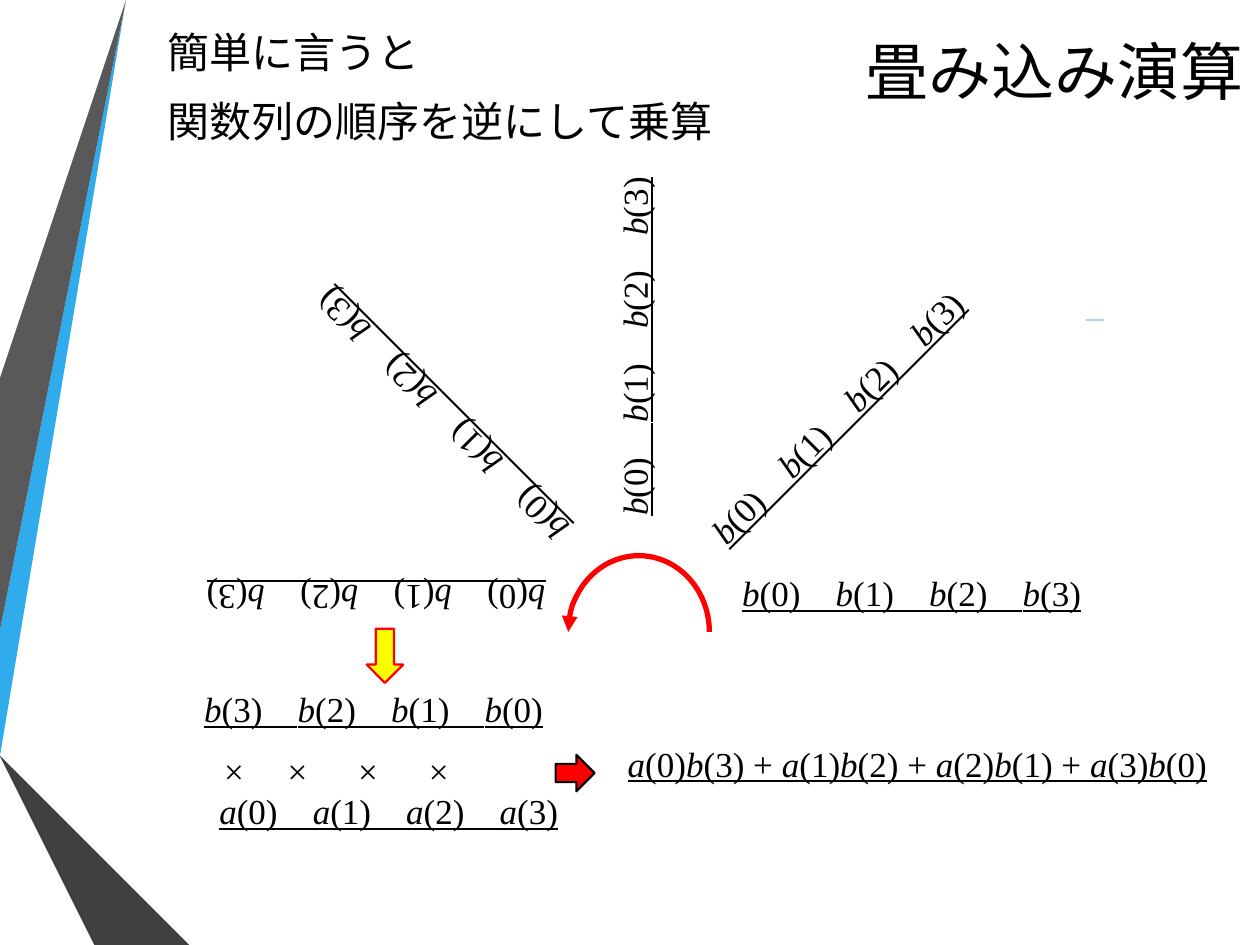
from itertools import groupby

from lxml import etree
from pptx import Presentation
from pptx.dml.color import RGBColor
from pptx.enum.shapes import MSO_CONNECTOR, MSO_SHAPE
from pptx.enum.text import MSO_ANCHOR, PP_ALIGN
from pptx.oxml.ns import qn
from pptx.util import Inches, Pt

LEFT, CENTER, RIGHT = PP_ALIGN.LEFT, PP_ALIGN.CENTER, PP_ALIGN.RIGHT
TOP, MIDDLE = MSO_ANCHOR.TOP, MSO_ANCHOR.MIDDLE
ARC, RIGHT_ARROW, DOWN_ARROW = MSO_SHAPE.ARC, MSO_SHAPE.RIGHT_ARROW, MSO_SHAPE.DOWN_ARROW
STRAIGHT = MSO_CONNECTOR.STRAIGHT

SERIF = "Times New Roman"
COLORS = {
    "text": "000000", "red": "FF0000", "yellow": "FFFF00", "dash": "AED2F4",
    "sky": "30ACEC", "grey": "595959", "shadow": "262626",
    "navy": "0C5A82", "blue": "1287C3", "charcoal": "404040",
}
RIBBONS = [
    ("sky", [(0, 5.44), (0, 5.75), (0.22, 5.79), (1.17, 0), (0.89, 0)]),
    ("grey", [(0.83, 0), (0.55, 0), (0, 3.36), (0, 5.06)]),
    ("shadow", [(0, 6.19), (0, 6.21), (0.93, 7.5), (0.99, 7.5)]),
    ("navy", [(0, 5.79), (0, 5.8), (1.56, 7.5), (1.63, 7.5)]),
    ("blue", [(0, 5.79), (1.63, 7.5), (2.33, 7.5), (0.22, 5.79), (0, 5.75)]),
    ("charcoal", [(0, 6.19), (0.99, 7.5), (1.51, 7.5), (0, 5.86)]),
]
TURNED_SEQUENCES = [
    (5.5, 4.49, 0.58, 0),
    (3.37, 2.46, 0.58, 270),
    (4.86, 3.11, 0.31, 315),
    (1.82, 2.96, 0.58, 225),
    (1.25, 4.39, 0.58, 180),
]


def color(name):
    """Return the named colour."""
    return RGBColor.from_string(COLORS[name])


def add_ribbon(slide, fill, points):
    """Add a filled polygon of the side decoration."""
    builder = slide.shapes.build_freeform(*points[0], scale=Inches(1))
    builder.add_line_segments(points[1:], close=True)
    shape = builder.convert_to_shape()
    shape.shadow.inherit = False
    shape.fill.solid()
    shape.fill.fore_color.rgb = color(fill)
    shape.line.fill.background()


def add_text_box(slide, box, anchor=TOP):
    """Add an empty wrapping text box and return it."""
    shape = slide.shapes.add_textbox(*map(Inches, box))
    shape.text_frame.word_wrap = True
    shape.text_frame.vertical_anchor = anchor
    return shape


def add_run(paragraph, text, size, font=SERIF):
    """Add one run of black text and return its font."""
    run = paragraph.add_run()
    run.text = text
    run.font.size = Pt(size)
    run.font.name = font
    run.font.color.rgb = color("text")
    return run.font


def set_spacing(paragraph, size):
    """Space a paragraph by a fifth of its size before and six points after."""
    paragraph.space_before = Pt(size / 5)
    paragraph.space_after = Pt(6)


def add_lines(slide, box, lines, size):
    """Add left-aligned text with one paragraph for each line."""
    frame = add_text_box(slide, box).text_frame
    for index, line in enumerate(lines):
        paragraph = frame.add_paragraph() if index else frame.paragraphs[0]
        paragraph.alignment = LEFT
        set_spacing(paragraph, size)
        add_run(paragraph, line, size)


def add_formula(slide, box, text, rotation=0):
    """Add an underlined formula whose letters are italic."""
    shape = add_text_box(slide, box)
    shape.rotation = rotation
    paragraph = shape.text_frame.paragraphs[0]
    paragraph.alignment = CENTER
    set_spacing(paragraph, 20)
    for is_letter, characters in groupby(text, str.isalpha):
        font = add_run(paragraph, "".join(characters), 20)
        font.italic = is_letter
        font.underline = True


def sequence(name, order):
    """Return the spaced terms of a function sequence."""
    return "    ".join(f"{name}({index})" for index in order)


def add_title(slide, text):
    """Add the right-aligned title."""
    paragraph = add_text_box(slide, (1.85, 0, 8.12, 1.12), MIDDLE).text_frame.paragraphs[0]
    paragraph.alignment = RIGHT
    add_run(paragraph, text, 36, "Calibri")


def add_outlined_shape(slide, kind, box, line, width, fill=None):
    """Add an outlined preset shape and return it."""
    shape = slide.shapes.add_shape(kind, *map(Inches, box))
    shape.shadow.inherit = False
    shape.line.color.rgb = color(line)
    shape.line.width = Pt(width)
    if fill:
        shape.fill.solid()
        shape.fill.fore_color.rgb = color(fill)
    else:
        shape.fill.background()
    return shape


def add_turning_arc(slide):
    """Add the half-circle arrow that shows the reversal."""
    arc = add_outlined_shape(slide, ARC, (4.51, 4.41, 1.12, 1.21), "red", 3)
    arc.adjustments[0] = 107.96
    arc.adjustments[1] = 0
    line = arc.line._get_or_add_ln()
    etree.SubElement(line, qn("a:headEnd"), type="triangle")


def add_dash(slide):
    """Add the short pale line at the right."""
    start_x, end_x, y = Inches(8.62), Inches(8.76), Inches(2.54)
    connector = slide.shapes.add_connector(STRAIGHT, start_x, y, end_x, y)
    connector.line.color.rgb = color("dash")
    connector.line.width = Pt(0.75)
    etree.SubElement(connector._element.spPr, qn("a:effectLst"))


def main():
    """Build the convolution slide."""
    presentation = Presentation()
    presentation.slide_width = Inches(10)
    presentation.slide_height = Inches(7.5)
    slide = presentation.slides.add_slide(presentation.slide_layouts[6])

    for fill, points in RIBBONS:
        add_ribbon(slide, fill, points)
    add_title(slide, "畳み込み演算")
    add_lines(slide, (1.23, 0.16, 5.17, 1.08),
              ["簡単に言うと", "関数列の順序を逆にして乗算"], 24)
    add_dash(slide)

    for left, top, height, rotation in TURNED_SEQUENCES:
        add_formula(slide, (left, top, 3.47, height), sequence("b", range(4)), rotation)
    add_turning_arc(slide)

    add_formula(slide, (1.23, 5.41, 3.47, 0.58), sequence("b", reversed(range(4))))
    add_formula(slide, (1.35, 6.22, 3.47, 0.58), sequence("a", range(4)))
    add_lines(slide, (1.68, 5.9, 3.47, 0.58), ["× 　×　  ×　  ×"], 20)
    products = " + ".join(f"a({index})b({3 - index})" for index in range(4))
    add_formula(slide, (4.72, 5.84, 5.12, 0.58), products)

    add_outlined_shape(slide, RIGHT_ARROW, (4.41, 5.99, 0.31, 0.29), "text", 1.25, "red")
    add_outlined_shape(slide, DOWN_ARROW, (2.91, 4.99, 0.29, 0.43), "red", 1.25, "yellow")
    presentation.save("out.pptx")


if __name__ == "__main__":
    main()
